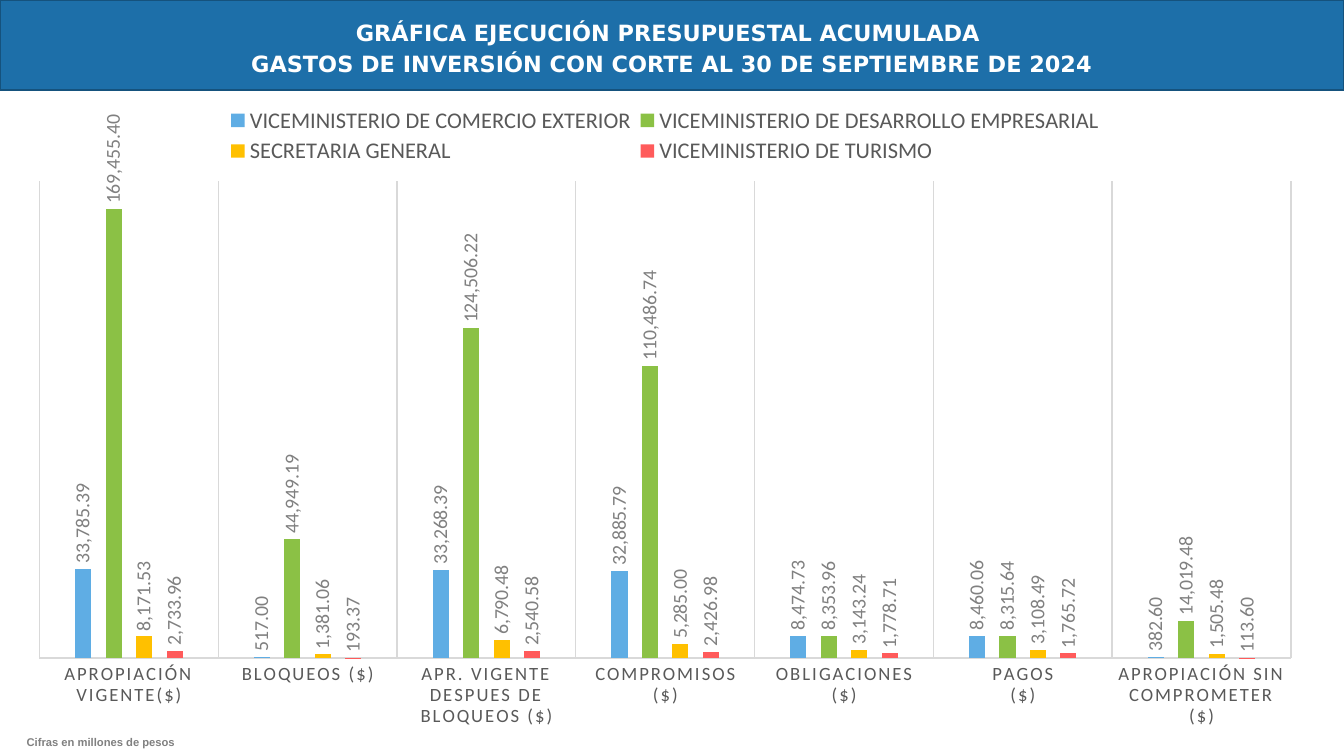
from pptx import Presentation
from pptx.chart.data import CategoryChartData
from pptx.dml.color import RGBColor
from pptx.enum.chart import XL_CHART_TYPE, XL_LABEL_POSITION, XL_LEGEND_POSITION, XL_TICK_MARK
from pptx.enum.text import MSO_ANCHOR, MSO_AUTO_SIZE, PP_ALIGN
from pptx.oxml import parse_xml
from pptx.oxml.ns import nsdecls, qn
from pptx.util import Inches, Pt

THEME = {
    "banner": "1D6FA9", "banner_line": "15527D", "grid": "D9D9D9",
    "title": {"name": "DejaVu Sans", "size": 12, "bold": True, "color": "FFFFFF"},
    "note": {"name": "Arial", "size": 6, "bold": True, "color": "808080"},
    "axis": {"name": "Calibri", "size": 10, "bold": False, "color": "595959"},
    "legend": {"name": "Calibri", "size": 12, "bold": False, "color": "595959"},
    "label": {"name": "Calibri", "size": 10.6, "bold": False, "color": "808080"},
}
NUMBER_FORMAT = "#,##0.00"
CATEGORIES = [
    "APROPIACIÓN VIGENTE($)", "BLOQUEOS ($)", "APR. VIGENTE DESPUES DE BLOQUEOS ($)",
    "COMPROMISOS\n($)", "OBLIGACIONES\n($)", "PAGOS\n($)", "APROPIACIÓN SIN COMPROMETER ($)",
]
SERIES = [
    ("VICEMINISTERIO DE COMERCIO EXTERIOR", "5FADE4",
     [33785.39, 517, 33268.39, 32885.79, 8474.73, 8460.06, 382.6]),
    ("VICEMINISTERIO DE DESARROLLO EMPRESARIAL", "8BC145",
     [169455.4, 44949.19, 124506.22, 110486.74, 8353.96, 8315.64, 14019.48]),
    ("SECRETARIA GENERAL", "FFC000",
     [8171.53, 1381.06, 6790.48, 5285, 3143.24, 3108.49, 1505.48]),
    ("VICEMINISTERIO DE TURISMO", "FF5B5B",
     [2733.96, 193.37, 2540.58, 2426.98, 1778.71, 1765.72, 113.6]),
]


def format_font(font, style):
    values = {"name": style["name"], "size": Pt(style["size"]), "bold": style["bold"]}
    for name, value in values.items():
        setattr(font, name, value)
    font.color.rgb = RGBColor.from_string(style["color"])


def place_in_chart(element, index, target, x, y, w, h):
    """Give a chart part a fixed place, in fractions of the chart."""
    for old in element.findall(qn("c:layout")):
        element.remove(old)
    sizes = "".join(f'<c:{key} val="{value}"/>' for key, value in zip("xywh", (x, y, w, h)))
    element.insert(index, parse_xml(
        f'<c:layout {nsdecls("c")}><c:manualLayout>{target}'
        f'<c:xMode val="edge"/><c:yMode val="edge"/>{sizes}</c:manualLayout></c:layout>'))


# A 16:9 page
deck = Presentation()
deck.slide_width, deck.slide_height = Inches(10), Inches(10 * 9 / 16)
page = deck.slides.add_slide(deck.slide_layouts[5])

# Title banner
banner = page.shapes.title
banner.left, banner.top, banner.width, banner.height = 0, 0, Inches(10), Inches(0.67)
banner.fill.solid()
banner.fill.fore_color.rgb = RGBColor.from_string(THEME["banner"])
banner.line.color.rgb = RGBColor.from_string(THEME["banner_line"])
banner.line.width = Pt(1)
frame = banner.text_frame
frame.text = ("GRÁFICA EJECUCIÓN PRESUPUESTAL ACUMULADA \n"
              "GASTOS DE INVERSIÓN CON CORTE AL 30 DE SEPTIEMBRE DE 2024")
frame_format = {"word_wrap": True, "vertical_anchor": MSO_ANCHOR.MIDDLE, "margin_left": 0,
                "margin_right": 0, "margin_top": Inches(0.07), "margin_bottom": 0}
for name, value in frame_format.items():
    setattr(frame, name, value)
para_format = {"alignment": PP_ALIGN.CENTER, "line_spacing": 0.9, "space_before": Pt(3.6)}
for para in frame.paragraphs:
    for name, value in para_format.items():
        setattr(para, name, value)
    format_font(para.runs[0].font, THEME["title"])

# Units note
note = page.shapes.add_textbox(Inches(0.1), Inches(5.43), Inches(1.83), Inches(0.19))
note.text_frame.word_wrap = True
note.text_frame.auto_size = MSO_AUTO_SIZE.SHAPE_TO_FIT_TEXT
para = note.text_frame.paragraphs[0]
para.line_spacing = 0.9
para.space_before = Pt(8)
span = para.add_run()
span.text = "Cifras en millones de pesos"
format_font(span.font, THEME["note"])

# Budget chart
data = CategoryChartData(number_format=NUMBER_FORMAT)
data.categories = CATEGORIES
for name, color, values in SERIES:
    data.add_series(name, values)
chart = page.shapes.add_chart(XL_CHART_TYPE.COLUMN_CLUSTERED, Inches(0.1), Inches(0.67),
                              Inches(9.7), Inches(4.86), data).chart
chart.has_title = False
format_font(chart.font, THEME["axis"])
plot = chart.plots[0]
for name, value in {"gap_width": 444, "overlap": -90, "vary_by_categories": False}.items():
    setattr(plot, name, value)

# Columns with upright value labels
for series, (name, color, values) in zip(plot.series, SERIES):
    series.format.fill.solid()
    series.format.fill.fore_color.rgb = RGBColor.from_string(color)
    labels = series.data_labels
    label_format = {"show_value": True, "position": XL_LABEL_POSITION.OUTSIDE_END,
                    "number_format": NUMBER_FORMAT, "number_format_is_linked": False}
    for key, value in label_format.items():
        setattr(labels, key, value)
    format_font(labels.font, THEME["label"])
    body = labels._element.find(qn("c:txPr")).find(qn("a:bodyPr"))
    body.set("rot", "-5400000")
    body.set("vert", "horz")

# Axes
values_axis = chart.value_axis
axis_format = {"minimum_scale": 0, "maximum_scale": 180000,
               "has_major_gridlines": False, "visible": False}
for name, value in axis_format.items():
    setattr(values_axis, name, value)
axis = chart.category_axis
axis.has_major_gridlines = True
axis.major_tick_mark = XL_TICK_MARK.NONE
for line in (axis.format.line, axis.major_gridlines.format.line):
    line.color.rgb = RGBColor.from_string(THEME["grid"])
    line.width = Pt(0.75)
format_font(axis.tick_labels.font, THEME["axis"])
for run_format in axis._element.iter(qn("a:defRPr")):
    run_format.set("spc", "120")

# Legend and plot area
chart.has_legend = True
legend = chart.legend
legend.position = XL_LEGEND_POSITION.TOP
legend.include_in_layout = False
format_font(legend.font, THEME["legend"])
place_in_chart(legend._element, 1, "", 0.16, 0.02, 0.68, 0.1)
plot_area = chart._chartSpace.find(qn("c:chart")).find(qn("c:plotArea"))
place_in_chart(plot_area, 0, '<c:layoutTarget val="inner"/>', 0.02, 0.14, 0.96, 0.73)

deck.save("out.pptx")
